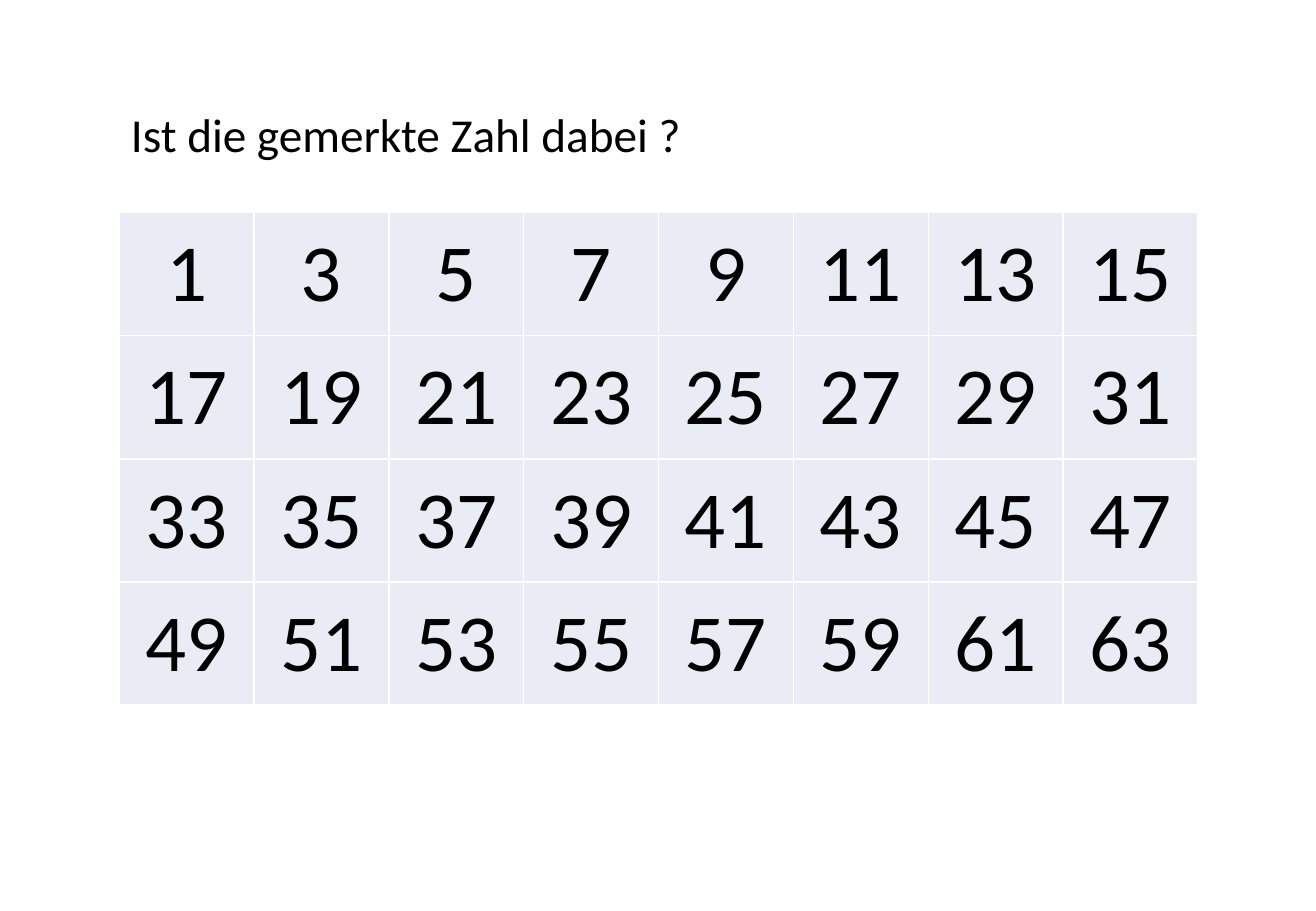
from lxml import etree
from pptx import Presentation
from pptx.dml.color import RGBColor
from pptx.enum.text import MSO_ANCHOR, MSO_AUTO_SIZE, PP_ALIGN
from pptx.oxml.ns import qn
from pptx.util import Inches, Pt

BLACK = RGBColor(0x00, 0x00, 0x00)
WHITE = RGBColor(0xFF, 0xFF, 0xFF)
CELL_FILL = RGBColor(0xE9, 0xEB, 0xF5)
FONT_NAME = "Calibri"

ROWS, COLUMNS = 4, 8
COLUMN_WIDTH, ROW_HEIGHT = 1.11, 1.0
LEFT = 0.98


def write_text(text_frame, text, size, color=BLACK, align=PP_ALIGN.LEFT):
    paragraph = text_frame.paragraphs[0]
    paragraph.alignment = align
    run = paragraph.add_run()
    run.text = text
    run.font.name = FONT_NAME
    run.font.size = Pt(size)
    run.font.color.rgb = color


def set_borders(cell, color, width):
    properties = cell._tc.get_or_add_tcPr()
    # Border lines come before the fill in the cell properties
    for index, side in enumerate(("lnL", "lnR", "lnT", "lnB")):
        line = etree.Element(qn(f"a:{side}"), w=str(Pt(width)))
        fill = etree.SubElement(line, qn("a:solidFill"))
        etree.SubElement(fill, qn("a:srgbClr"), val=str(color))
        properties.insert(index, line)


def add_question(slide, text):
    box = slide.shapes.add_textbox(Inches(LEFT), Inches(0.82), Inches(4.77), Inches(0.57))
    box.text_frame.word_wrap = False
    box.text_frame.auto_size = MSO_AUTO_SIZE.SHAPE_TO_FIT_TEXT
    write_text(box.text_frame, text, size=28)


def format_cell(cell, text):
    cell.margin_left = cell.margin_right = Inches(0.04)
    cell.margin_top = cell.margin_bottom = Inches(0.1)
    cell.vertical_anchor = MSO_ANCHOR.TOP
    cell.fill.solid()
    cell.fill.fore_color.rgb = CELL_FILL
    set_borders(cell, WHITE, width=1)
    write_text(cell.text_frame, text, size=48, align=PP_ALIGN.CENTER)


def add_number_table(slide):
    table = slide.shapes.add_table(
        ROWS, COLUMNS, Inches(LEFT), Inches(1.75),
        Inches(COLUMNS * COLUMN_WIDTH), Inches(ROWS * ROW_HEIGHT),
    ).table
    table.first_row = False
    table.horz_banding = False
    for column in table.columns:
        column.width = Inches(COLUMN_WIDTH)
    for row in table.rows:
        row.height = Inches(ROW_HEIGHT)
    # Odd numbers from 1 to 63, row by row
    for index, cell in enumerate(table.iter_cells()):
        format_cell(cell, str(2 * index + 1))


def main():
    presentation = Presentation()
    presentation.slide_width = Inches(10.83)
    presentation.slide_height = Inches(7.5)
    slide = presentation.slides.add_slide(presentation.slide_layouts[6])

    # Number card
    add_number_table(slide)

    # Question above the card
    add_question(slide, "Ist die gemerkte Zahl dabei ?")

    presentation.save("out.pptx")


if __name__ == "__main__":
    main()
